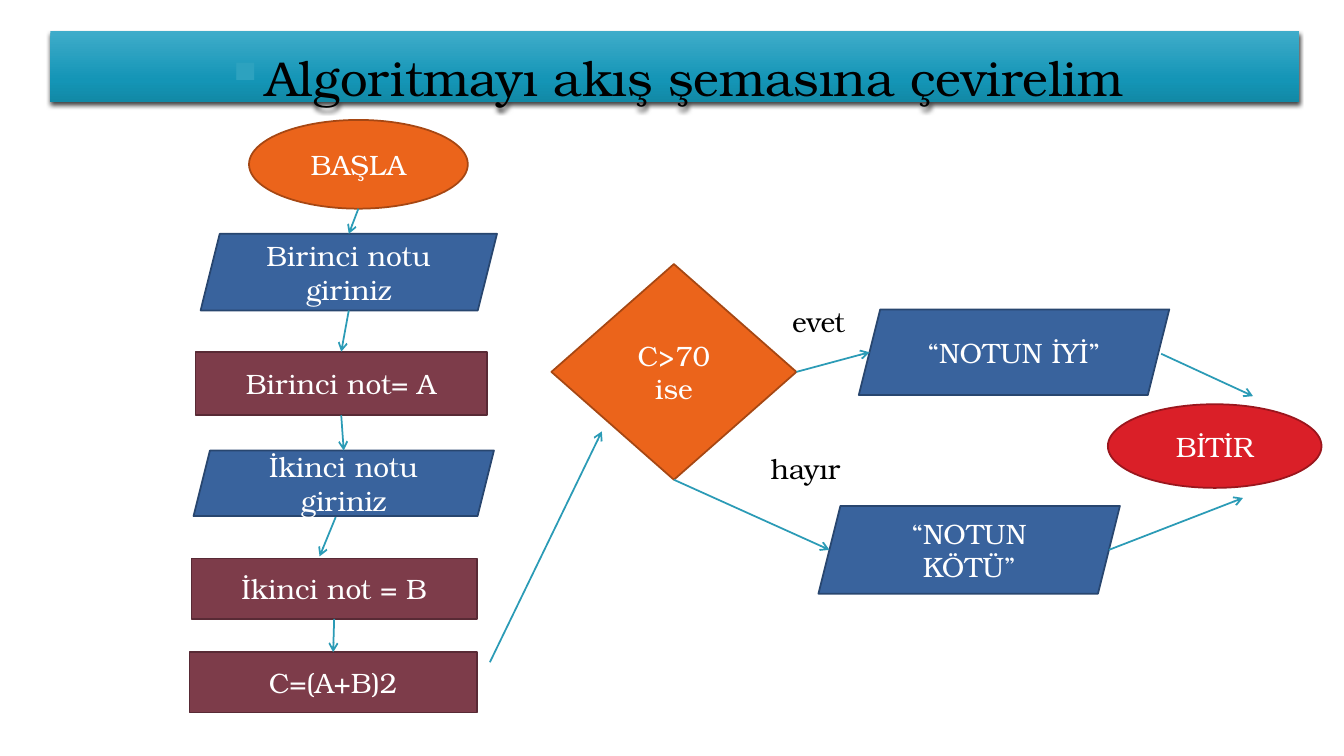
from lxml import etree
from pptx import Presentation
from pptx.dml.color import RGBColor
from pptx.enum.shapes import MSO_CONNECTOR, MSO_SHAPE
from pptx.enum.text import MSO_ANCHOR, PP_ALIGN
from pptx.oxml import parse_xml
from pptx.oxml.ns import qn
from pptx.util import Inches, Pt

OVAL, BOX = MSO_SHAPE.OVAL, MSO_SHAPE.RECTANGLE
SLANT, TEST = MSO_SHAPE.PARALLELOGRAM, MSO_SHAPE.FLOWCHART_DECISION
LINE = MSO_CONNECTOR.STRAIGHT
TOP, MIDDLE, CENTER = MSO_ANCHOR.TOP, MSO_ANCHOR.MIDDLE, PP_ALIGN.CENTER
NS = "http://schemas.openxmlformats.org/drawingml/2006/main"

# Content: places are percentages of slide width and height
TITLE = ("Algoritmayı akış şemasına çevirelim", (3.75, 4.13, 92.93, 9.33))
STEPS = {
    "start": (OVAL, "orange", "BAŞLA", (18.53, 15.87, 16.28, 11.73)),
    "first": (SLANT, "blue", "Birinci notu giriniz", (14.93, 30.93, 22.05, 10.13)),
    "a": (BOX, "plum", "Birinci not= A", (14.55, 46.53, 21.68, 8.4)),
    "second": (SLANT, "blue", "İkinci notu giriniz", (14.4, 59.6, 22.35, 8.67)),
    "b": (BOX, "plum", "İkinci not = B", (14.25, 73.87, 21.23, 8)),
    "mean": (BOX, "plum", "C=(A+B)2", (14.1, 86.27, 21.38, 8)),
    "test": (TEST, "orange", "C>70\vise", (41.03, 34.93, 18.23, 28.53)),
    "good": (SLANT, "blue", "“NOTUN İYİ”", (63.9, 40.93, 23.1, 11.33)),
    "bad": (SLANT, "blue", "“NOTUN KÖTÜ”", (60.9, 66.93, 22.43, 11.6)),
    "end": (OVAL, "red", "BİTİR", (82.43, 53.47, 15.9, 11.07)),
}
LABELS = [
    ("evet", (57.38, 38.8, 7.05, 6.93)),
    ("hayır", (54.08, 58.13, 11.7, 8.4)),
]
# Each end is a step with a side, or a free point
ARROWS = [
    (("start", "bottom"), ("first", "top")),
    (("first", "bottom"), ("a", "top")),
    (("a", "bottom"), ("second", "top")),
    ((24.98, 68.4), (23.78, 73.6)),
    (("b", "bottom"), ("mean", "top")),
    ((36.45, 87.6), (44.78, 57.07)),
    (("test", "right"), ("good", "left")),
    (("test", "bottom"), ("bad", "left")),
    ((86.4, 46.8), (93.23, 52.4)),
    (("bad", "right"), (92.48, 65.87)),
]
SIDES = {"top": (0.5, 0), "bottom": (0.5, 1), "left": (0, 0.5), "right": (1, 0.5)}

THEME = {
    "font": "TeX Gyre Bonum", "title": 35, "body": 20, "line": 1.25,
    "dark": "000000", "light": "FFFFFF", "arrow": "2B9BB6", "bullet": "2DA2BF",
    "band": [(0, "3FACCA"), (69, "1495B6"), (100, "1289A6")],
    "orange": ("EB641B", "A64713"), "blue": ("39639D", "28466F"),
    "plum": ("7D3C4A", "582A35"), "red": ("DA1F28", "9A161D"),
}

deck = Presentation()
deck.slide_width, deck.slide_height = Inches(13.33), Inches(7.5)
slide = deck.slides.add_slide(deck.slide_layouts[6])
shapes = slide.shapes


def scale(place):
    """Turn percentages, x and y in turn, into slide lengths."""
    sizes = (deck.slide_width, deck.slide_height) * 2
    return [round(part * size / 100) for part, size in zip(place, sizes)]


def write(shape, text, size="body", color="light", anchor=MIDDLE, hang=False):
    frame = shape.text_frame
    frame.word_wrap = True
    frame.vertical_anchor = anchor
    para = frame.paragraphs[0]
    para.text = text
    para.alignment = CENTER
    for run in para.runs:
        run.font.name = THEME["font"]
        run.font.size = Pt(THEME[size])
        run.font.color.rgb = RGBColor.from_string(THEME[color])
    if hang:
        para.line_spacing = 1.2
        para.space_before = Pt(10)
        props = para._p.get_or_add_pPr()
        props.set("marL", str(Inches(0.25)))
        props.set("indent", str(-Inches(0.25)))
    return para


def port(end):
    """Find the point for one end of an arrow."""
    if end[0] not in STEPS:
        return scale(end)
    kind, _, _, place = STEPS[end[0]]
    left, top, width, height = scale(place)
    across, down = SIDES[end[1]]
    # A slanted side is met halfway along its lean
    lean = height / 8 * (1 - 2 * across) if kind == SLANT else 0
    return round(left + width * across + lean), round(top + height * down)


# Labels
for text, place in LABELS:
    write(shapes.add_textbox(*scale(place)), text, color="dark", anchor=TOP, hang=True)

# Steps
for kind, hue, text, place in STEPS.values():
    step = shapes.add_shape(kind, *scale(place))
    step.shadow.inherit = False
    fill, edge = THEME[hue]
    step.fill.solid()
    step.fill.fore_color.rgb = RGBColor.from_string(fill)
    step.line.color.rgb = RGBColor.from_string(edge)
    step.line.width = Pt(THEME["line"])
    write(step, text)

# Title band with gradient, shadow and bullet
text, place = TITLE
band = shapes.add_shape(BOX, *scale(place))
band.line.fill.background()
stops = "".join(
    f'<a:gs pos="{at * 1000}"><a:srgbClr val="{hue}"/></a:gs>' for at, hue in THEME["band"])
props = band._element.spPr
props.find(qn("a:ln")).addprevious(parse_xml(
    f'<a:gradFill xmlns:a="{NS}" rotWithShape="1"><a:gsLst>{stops}</a:gsLst>'
    '<a:lin ang="5400000" scaled="0"/></a:gradFill>'))
props.append(parse_xml(
    f'<a:effectLst xmlns:a="{NS}"><a:outerShdw blurRad="{Pt(3)}" dist="{Pt(2)}" '
    f'dir="5400000" rotWithShape="0"><a:srgbClr val="{THEME["dark"]}">'
    '<a:alpha val="75000"/></a:srgbClr></a:outerShdw></a:effectLst>'))
para = write(band, text, size="title", color="dark", anchor=TOP, hang=True)
props = para._p.get_or_add_pPr()
hue = etree.SubElement(props, qn("a:buClr"))
etree.SubElement(hue, qn("a:srgbClr"), val=THEME["bullet"])
etree.SubElement(props, qn("a:buSzPct"), val="110000")
etree.SubElement(props, qn("a:buChar"), char="▪")

# Arrows
for start, end in ARROWS:
    arrow = shapes.add_connector(LINE, *port(start), *port(end))
    arrow.line.color.rgb = RGBColor.from_string(THEME["arrow"])
    arrow.line.width = Pt(THEME["line"])
    etree.SubElement(arrow.line._get_or_add_ln(), qn("a:tailEnd"), type="arrow")
    etree.SubElement(arrow._element.spPr, qn("a:effectLst"))

deck.save("out.pptx")
